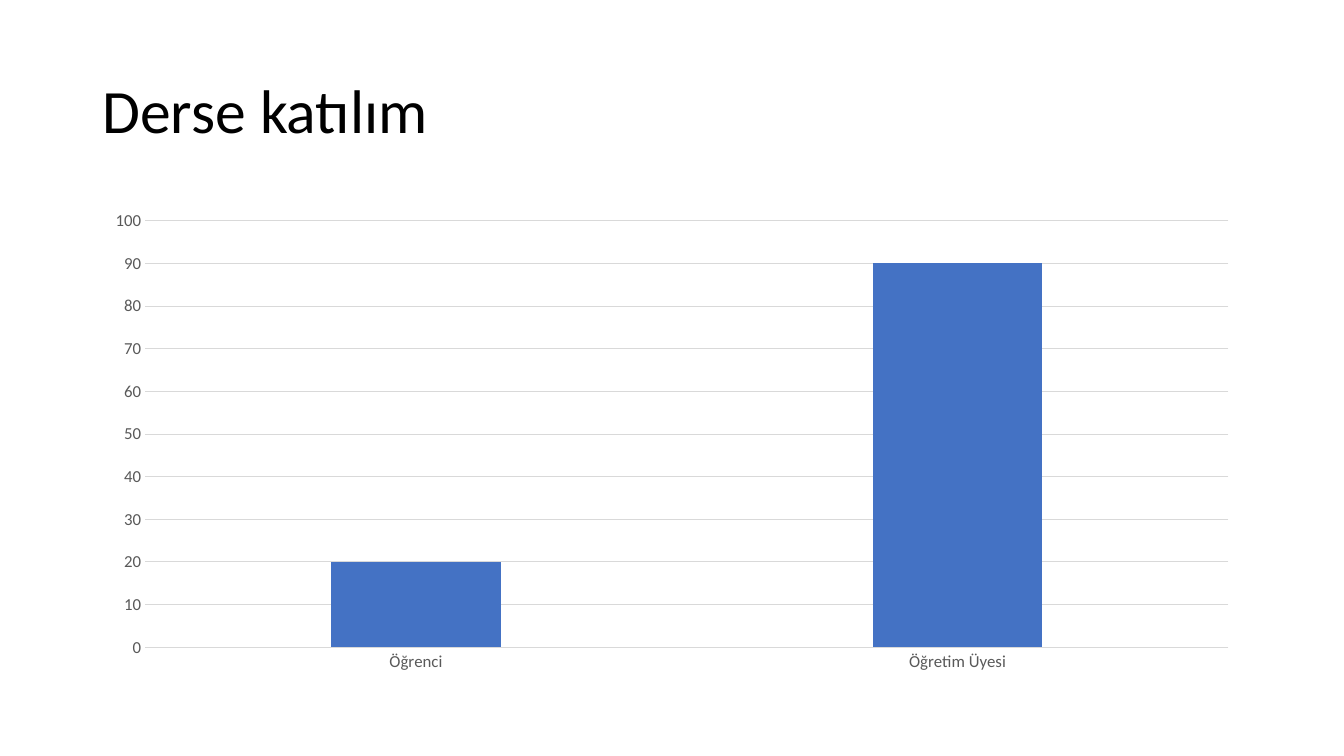
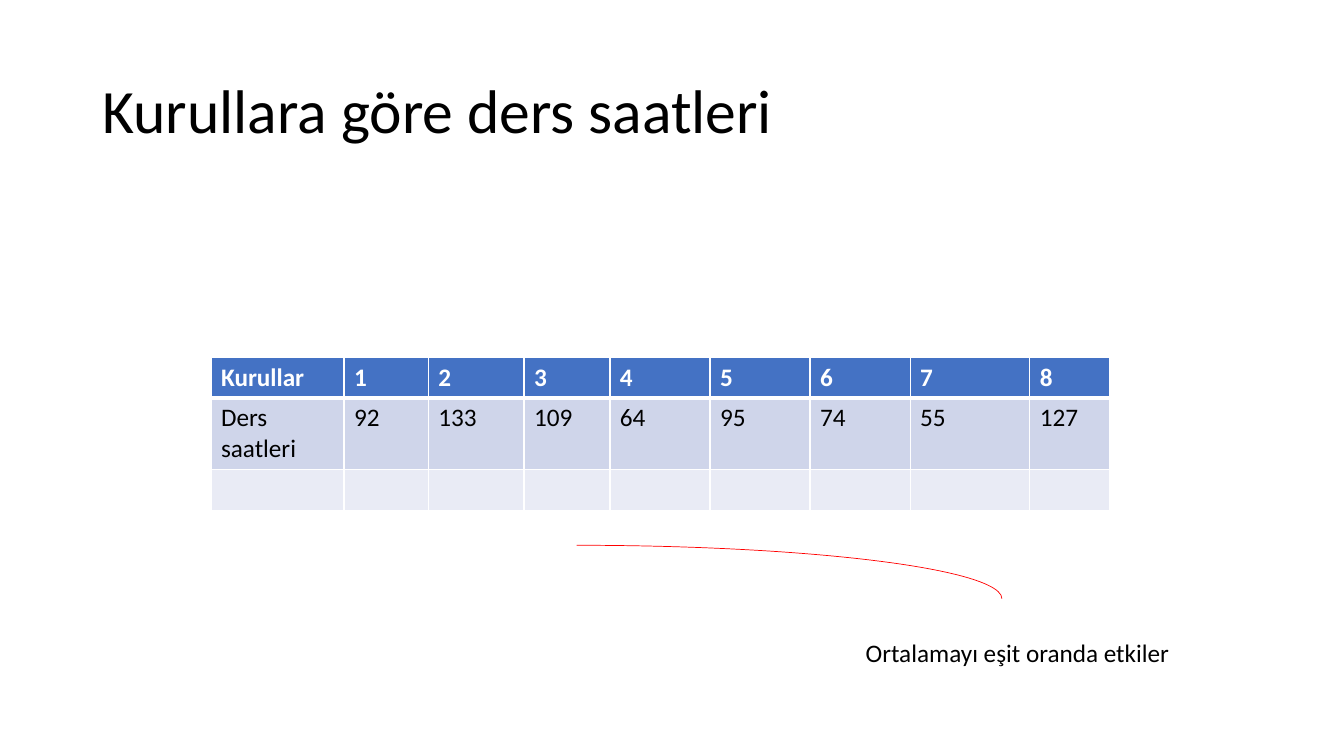
from lxml import etree
from pptx import Presentation
from pptx.chart.data import CategoryChartData
from pptx.dml.color import RGBColor
from pptx.enum import chart as ch, shapes, text
from pptx.oxml.ns import qn
from pptx.util import Pt


class Theme:
    face = "Calibri"
    black = RGBColor.from_string("000000")
    white = RGBColor.from_string("FFFFFF")
    blue = RGBColor.from_string("4472C4")
    band = RGBColor.from_string("CFD5EA")
    pale = RGBColor.from_string("E9EBF5")
    gray = RGBColor.from_string("595959")
    rule = RGBColor.from_string("D9D9D9")
    red = RGBColor.from_string("FF0000")
    head, body, label = Pt(44), Pt(18), Pt(12)


def write(frame, words, size=Theme.body, color=Theme.black, bold=False, space=1.0):
    para = frame.paragraphs[0]
    para.alignment = text.PP_ALIGN.LEFT
    para.line_spacing = space
    run = para.add_run()
    run.text = words
    font = run.font
    font.name, font.size, font.bold = Theme.face, size, bold
    font.color.rgb = color


def edge(cell, side, width):
    line = etree.SubElement(cell._tc.get_or_add_tcPr(), qn("a:" + side), w=str(Pt(width)))
    fill = etree.SubElement(line, qn("a:solidFill"))
    etree.SubElement(fill, qn("a:srgbClr"), val=str(Theme.white))


deck = Presentation()
deck.slide_width, deck.slide_height = Pt(960), Pt(540)

# Slides with the shared title style
pages = []
for words in ("Derse katılım", "Kurullara göre ders saatleri"):
    page = deck.slides.add_slide(deck.slide_layouts[5])
    title = page.shapes.title
    title.left, title.top, title.width, title.height = Pt(66), Pt(28.75), Pt(828), Pt(104.4)
    title.text_frame.vertical_anchor = text.MSO_ANCHOR.MIDDLE
    title.text_frame.auto_size = text.MSO_AUTO_SIZE.NONE
    write(title.text_frame, words, size=Theme.head, space=0.9)
    pages.append(page)
first, second = pages

# Attendance chart
data = CategoryChartData()
data.categories = ["Öğrenci", "Öğretim Üyesi"]
data.add_series("Series 1", [20, 90])
chart = first.shapes.add_chart(
    ch.XL_CHART_TYPE.COLUMN_CLUSTERED, Pt(66), Pt(143.75), Pt(828), Pt(342.6), data).chart
chart.has_legend = chart.has_title = False
chart.font.name, chart.font.size = Theme.face, Theme.label
chart.font.color.rgb = Theme.gray

plot = chart.plots[0]
plot.gap_width, plot.overlap, plot.vary_by_categories = 219, -27, False
bars = plot.series[0].format.fill
bars.solid()
bars.fore_color.rgb = Theme.blue

cats, vals = chart.category_axis, chart.value_axis
for axis in (cats, vals):
    axis.major_tick_mark = axis.minor_tick_mark = ch.XL_TICK_MARK.NONE
vals.minimum_scale, vals.maximum_scale, vals.major_unit = 0, 100, 10
vals.has_major_gridlines = True
vals.format.line.fill.background()
for line in (cats.format.line, vals.major_gridlines.format.line):
    line.color.rgb = Theme.rule
    line.width = Pt(0.75)

# Table of hours per board
rows = [
    ["Kurullar", *range(1, 9)],
    ["Ders saatleri", 92, 133, 109, 64, 95, 74, 55, 127],
    [""] * 9,
]
wides = [95, 60.2, 68.4, 61.4, 71.5, 71.5, 71.5, 85.5, 57]
fills = [Theme.blue, Theme.band, Theme.pale]
grid = second.shapes.add_table(
    len(rows), len(wides), Pt(150.7), Pt(255), Pt(sum(wides)), Pt(87.6)).table
for col, wide in zip(grid.columns, wides):
    col.width = Pt(wide)
for r, row in enumerate(rows):
    grid.rows[r].height = Pt(29.2)
    for c, value in enumerate(row):
        cell = grid.cell(r, c)
        top, base = (3 if r == 1 else 1), (3 if r == 0 else 1)
        for side, width in (("lnL", 1), ("lnR", 1), ("lnT", top), ("lnB", base)):
            edge(cell, side, width)
        cell.fill.solid()
        cell.fill.fore_color.rgb = fills[r]
        if value != "":
            write(cell.text_frame, str(value), bold=r == 0,
                  color=Theme.white if r == 0 else Theme.black)

# Arc leading to the remark
arc = second.shapes.add_shape(
    shapes.MSO_SHAPE.ARC, Pt(108), Pt(389.5), Pt(607.7), Pt(76.3))
arc.shadow.inherit = False
arc.fill.background()
arc.line.color.rgb = Theme.red
arc.line.width = Pt(0.5)

# Remark
note = second.shapes.add_textbox(Pt(611.3), Pt(451.4), Pt(240.5), Pt(29.1)).text_frame
note.word_wrap = False
note.auto_size = text.MSO_AUTO_SIZE.SHAPE_TO_FIT_TEXT
write(note, "Ortalamayı eşit oranda etkiler")

deck.save("out.pptx")
